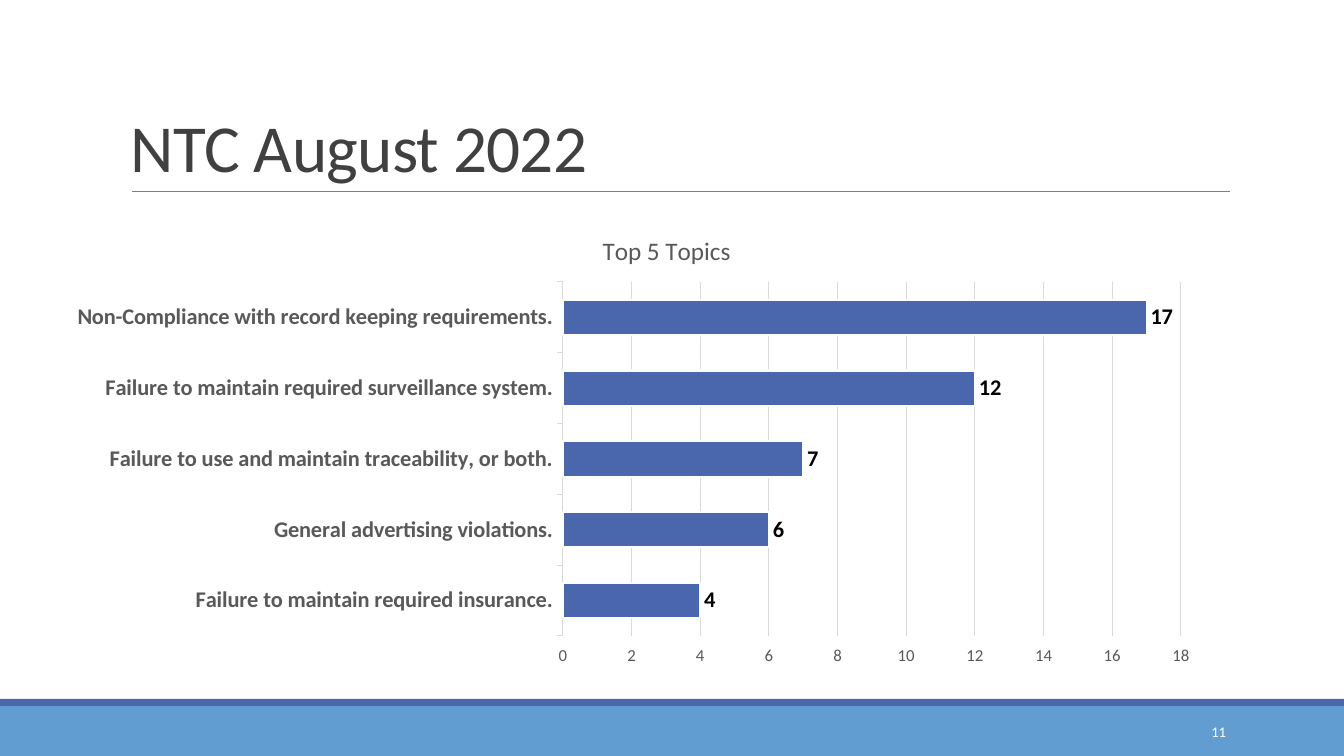
"""Build the slide with the top five topics of August 2022 as a bar chart."""
import pptx
import pptx.util
import pptx.chart.data
import pptx.dml.color
import pptx.enum.chart
import pptx.enum.shapes
import pptx.enum.text
import pptx.oxml

SCALE = 914400 / 100.8
WIDE, HIGH = 1344, 756
BLUE, SKY, GREY, PALE = "4A66AC", "629DD1", "595959", "D9D9D9"
TOPICS = {
    "Failure to maintain required insurance.": 4,
    "General advertising violations.": 6,
    "Failure to use and maintain traceability, or both.": 7,
    "Failure to maintain required surveillance system.": 12,
    "Non-Compliance with record keeping requirements.": 17,
}
hue = pptx.dml.color.RGBColor.from_string
Pt = pptx.util.Pt
enum = pptx.enum


def px(*nums):
    return [round(num * SCALE) for num in nums]


def dress(font, size, shade, bold=False):
    form = {"name": "Calibri", "size": Pt(size), "bold": bold}
    for key, value in form.items():
        setattr(font, key, value)
    font.color.rgb = hue(shade)


deck = pptx.Presentation()
deck.slide_width, deck.slide_height = px(WIDE, HIGH)
slide = deck.slides.add_slide(deck.slide_layouts[6])
shapes = slide.shapes

for top, height, shade in [(706, 50, SKY), (699, 7, BLUE)]:
    band = shapes.add_shape(enum.shapes.MSO_SHAPE.RECTANGLE, *px(0, top, WIDE, height))
    band.shadow.inherit = False
    band.fill.solid()
    band.fill.fore_color.rgb = hue(shade)
    band.line.fill.background()

rule = shapes.add_connector(enum.shapes.MSO_CONNECTOR.STRAIGHT, *px(132, 191, 1230, 191))
rule.line.color.rgb = hue("808080")
rule.line.width = Pt(0.5)
props = rule._element.spPr
props.append(pptx.oxml.parse_xml(
    '<a:effectLst xmlns:a="http://schemas.openxmlformats.org/drawingml/2006/main"/>'))

ANCHOR, ALIGN = enum.text.MSO_ANCHOR, enum.text.PP_ALIGN
texts = [
    ("NTC August 2022", (121, 31, 1109, 160), 48, "404040", ANCHOR.BOTTOM, ALIGN.LEFT, 0.85, -50),
    ("11", (1092, 712, 144, 40), 10.5, "FFFFFF", ANCHOR.MIDDLE, ALIGN.RIGHT, 1.0, 0),
]
for words, box, size, shade, anchor, align, lead, track in texts:
    frame = shapes.add_textbox(*px(*box)).text_frame
    frame.word_wrap = True
    frame.vertical_anchor = anchor
    para = frame.paragraphs[0]
    para.alignment = align
    para.line_spacing = lead
    run = para.add_run()
    run.text = words
    dress(run.font, size, shade)
    run.font._element.set("spc", str(track))

data = pptx.chart.data.CategoryChartData()
data.categories = list(TOPICS)
data.add_series("Series 1", list(TOPICS.values()))
LEFT, TOP, SPAN, DEPTH = 50, 210, 1163, 466
chart = shapes.add_chart(enum.chart.XL_CHART_TYPE.BAR_CLUSTERED,
                         *px(LEFT, TOP, SPAN, DEPTH), data).chart
dress(chart.font, 10, "000000")
chart.has_legend = False
chart.has_title = True
title = chart.chart_title
title.include_in_layout = False
title.text_frame.text = "Top 5 Topics"
dress(title.text_frame.paragraphs[0].runs[0].font, 18, GREY)

plot = chart.plots[0]
plot.gap_width = 100
plot.vary_by_categories = False
bars = plot.series[0].format
bars.fill.solid()
bars.fill.fore_color.rgb = hue(BLUE)
bars.line.color.rgb = hue("FFFFFF")
bars.line.width = Pt(1.5)
plot.has_data_labels = True
labels = plot.data_labels
labels.show_value = True
labels.position = enum.chart.XL_LABEL_POSITION.OUTSIDE_END
dress(labels.font, 16, "000000", True)

names, scale = chart.category_axis, chart.value_axis
dress(names.tick_labels.font, 16, GREY, True)
dress(scale.tick_labels.font, 12, GREY)
limits = {"minimum_scale": 0, "maximum_scale": 18, "major_unit": 2, "has_major_gridlines": True}
for key, value in limits.items():
    setattr(scale, key, value)
scale.format.line.fill.background()
for line in (names.format.line, scale.major_gridlines.format.line):
    line.color.rgb = hue(PALE)
    line.width = Pt(0.75)

area = chart._chartSpace.chart.plotArea
spots = [
    (title._element, 1, "", (598, 229)),
    (area, 0, '<c:layoutTarget val="inner"/>', (563, 282, 618, 354)),
]
for owner, slot, target, (x, y, *size) in spots:
    for old in owner.findall("{*}layout"):
        owner.remove(old)
    parts = [(x - LEFT) / SPAN, (y - TOP) / DEPTH]
    parts += [side / full for side, full in zip(size, (SPAN, DEPTH))]
    modes = '<c:xMode val="edge"/><c:yMode val="edge"/>'
    sides = "".join(f'<c:{tag} val="{part:.4f}"/>' for tag, part in zip("xywh", parts))
    owner.insert(slot, pptx.oxml.parse_xml(
        '<c:layout xmlns:c="http://schemas.openxmlformats.org/drawingml/2006/chart">'
        f"<c:manualLayout>{target}{modes}{sides}</c:manualLayout></c:layout>"))

deck.save("out.pptx")
